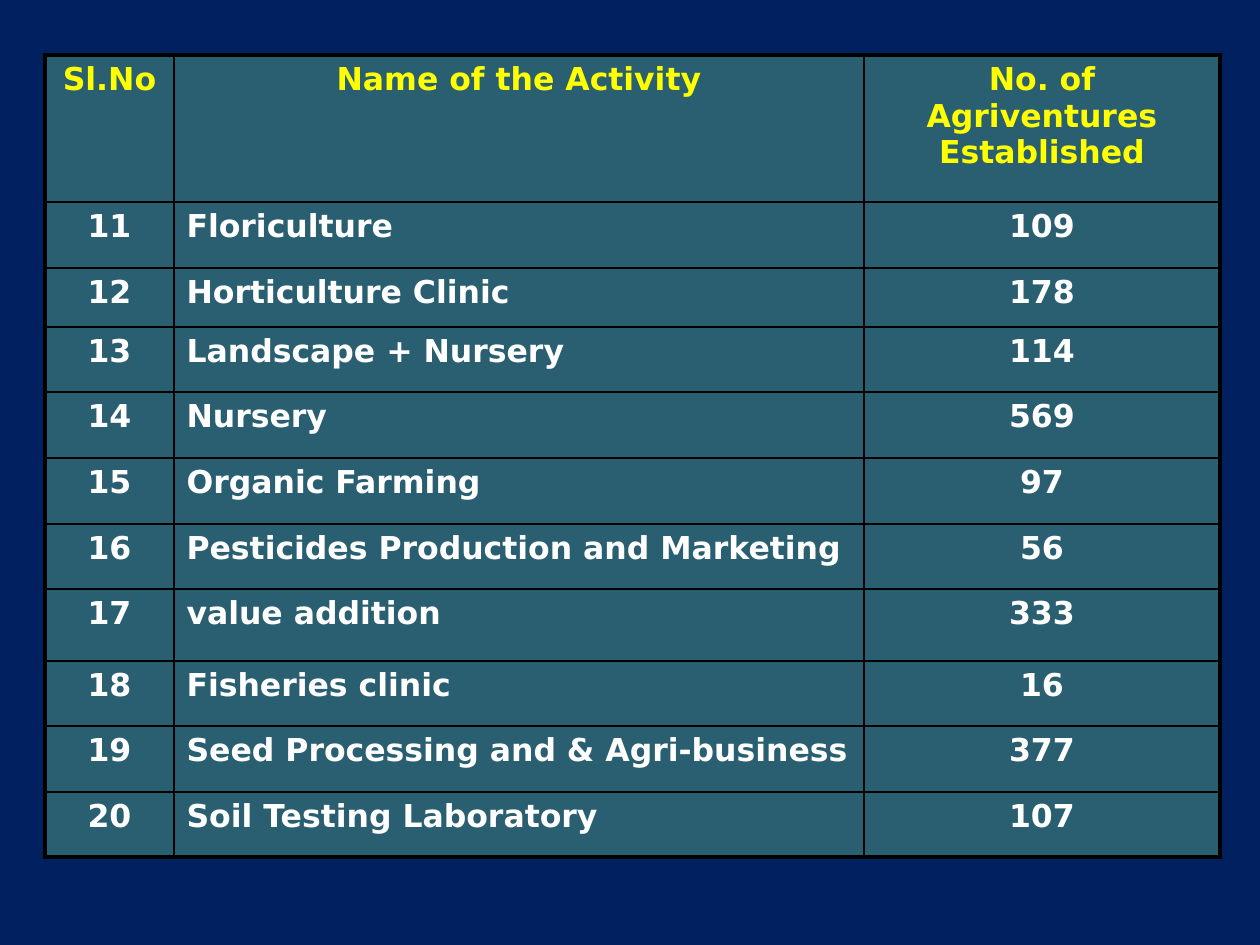
from itertools import pairwise

from lxml import etree
from pptx import Presentation
from pptx import util as u
from pptx.dml.color import RGBColor
from pptx.enum import text
from pptx.oxml import ns

NAVY = RGBColor(0x00, 0x20, 0x60)
TEAL = RGBColor(0x29, 0x5F, 0x71)
YELLOW = RGBColor(0xFF, 0xFF, 0x00)
WHITE = RGBColor(0xFF, 0xFF, 0xFF)
BLACK = RGBColor(0x00, 0x00, 0x00)

THIN, THICK = 1, 2.25
COLS = [45, 174, 864, 1220]
ROWS = [55, 202, 268, 327, 392, 458, 524, 589, 661, 726, 792, 857]

HEAD = ("Sl.No", "Name of the Activity", "No. of Agriventures Established")
DATA = [
    ("Floriculture", 109),
    ("Horticulture Clinic", 178),
    ("Landscape + Nursery", 114),
    ("Nursery", 569),
    ("Organic Farming", 97),
    ("Pesticides Production and Marketing", 56),
    ("value addition", 333),
    ("Fisheries clinic", 16),
    ("Seed Processing and & Agri-business", 377),
    ("Soil Testing Laboratory", 107),
]


def px(n):
    """Turn px, at 126 to the inch, into EMU."""
    return u.Emu(round(n * 914400 / 126))


def write(frame, words, size=18, color=WHITE, bold=True,
          align=text.PP_ALIGN.LEFT, font="DejaVu Sans", before=2.5):
    para = frame.paragraphs[0]
    para.alignment = align
    para.space_before = u.Pt(before)
    run = para.add_run()
    run.text = words
    run.font.name = font
    run.font.size = u.Pt(size)
    run.font.bold = bold
    run.font.color.rgb = color


class Deck:
    def __init__(self, wide, high, back):
        self.prs = Presentation()
        self.prs.slide_width = px(wide)
        self.prs.slide_height = px(high)
        self.slide = self.prs.slides.add_slide(self.prs.slide_layouts[6])
        fill = self.slide.background.fill
        fill.solid()
        fill.fore_color.rgb = back

    def edge(self, cell, widths):
        """Draw the left, right, top and bottom borders, in that order."""
        props = cell._tc.get_or_add_tcPr()
        for at, (side, width) in enumerate(zip("LRTB", widths)):
            line = etree.Element(ns.qn(f"a:ln{side}"), w=str(u.Pt(width)))
            fill = etree.SubElement(line, ns.qn("a:solidFill"))
            etree.SubElement(fill, ns.qn("a:srgbClr"), val=str(BLACK))
            props.insert(at, line)

    def table(self, rows, xs, ys):
        """Fill a table whose grid lines lie at xs and ys."""
        high, wide = len(rows), len(xs) - 1
        grid = self.slide.shapes.add_table(
            high, wide, px(xs[0]), px(ys[0]),
            px(xs[-1] - xs[0]), px(ys[-1] - ys[0])).table
        for col, (a, b) in zip(grid.columns, pairwise(xs)):
            col.width = px(b - a)
        for row, (a, b) in zip(grid.rows, pairwise(ys)):
            row.height = px(b - a)
        for r, row in enumerate(rows):
            for c, words in enumerate(row):
                cell = grid.cell(r, c)
                cell.fill.solid()
                cell.fill.fore_color.rgb = TEAL
                left = r > 0 and c == 1
                write(cell.text_frame, str(words),
                      color=WHITE if r else YELLOW,
                      align=text.PP_ALIGN.LEFT if left
                      else text.PP_ALIGN.CENTER)
                outer = (c == 0, c == wide - 1, r == 0, r == high - 1)
                self.edge(cell, [THICK if o else THIN for o in outer])


def main():
    deck = Deck(1260, 945, NAVY)
    body = [(n, *row) for n, row in enumerate(DATA, 11)]
    deck.table([HEAD, *body], COLS, ROWS)
    deck.prs.save("out.pptx")


if __name__ == "__main__":
    main()
